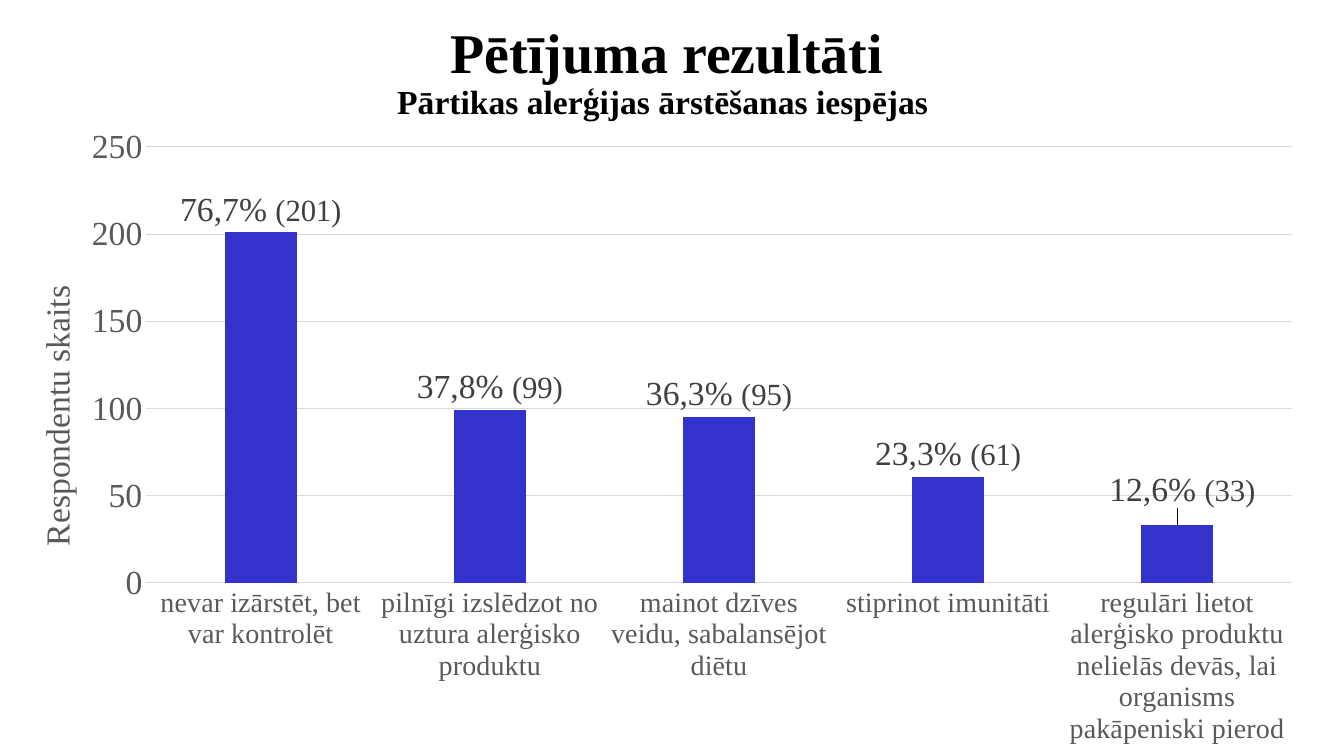
"""Builds the slide on treatment options for food allergy."""
import pptx
import pptx.chart.data
import pptx.dml.color
import pptx.enum.chart
import pptx.enum.text
import pptx.oxml
import pptx.oxml.ns
import pptx.util
from pptx.util import Inches

FONT = "Times New Roman"
BLACK = pptx.dml.color.RGBColor(0x00, 0x00, 0x00)
BAR_BLUE = pptx.dml.color.RGBColor(0x33, 0x33, 0xCC)
AXIS_GREY = pptx.dml.color.RGBColor(0x59, 0x59, 0x59)
LABEL_GREY = pptx.dml.color.RGBColor(0x40, 0x40, 0x40)
GRID_GREY = pptx.dml.color.RGBColor(0xD9, 0xD9, 0xD9)

ANSWERS = [
    ("nevar izārstēt, bet var kontrolēt", 201, "76,7%"),
    ("pilnīgi izslēdzot no uztura alerģisko produktu", 99, "37,8%"),
    ("mainot dzīves veidu, sabalansējot diētu", 95, "36,3%"),
    ("stiprinot imunitāti", 61, "23,3%"),
    ("regulāri lietot alerģisko produktu nelielās devās, "
     "lai organisms pakāpeniski pierod", 33, "12,6%"),
]


def set_font(font, size, color, bold=False):
    """Apply the slide's typeface with a size, colour and weight."""
    font.name = FONT
    font.size = pptx.util.Pt(size)
    font.color.rgb = color
    font.bold = bold


def add_run(paragraph, text, size, color, bold=False):
    """Append formatted text to a paragraph."""
    run = paragraph.add_run()
    run.text = text
    set_font(run.font, size, color, bold)


def set_line(line, color):
    """Draw a thin line in the given colour."""
    line.color.rgb = color
    line.width = pptx.util.Pt(0.75)


def make_layout(**settings):
    """Return a manual chart layout with the given settings."""
    items = "".join(f'<c:{key} val="{value}"/>' for key, value in settings.items())
    return pptx.oxml.parse_xml(
        f'<c:layout {pptx.oxml.ns.nsdecls("c")}>'
        f'<c:manualLayout>{items}</c:manualLayout></c:layout>')


def place_after(chart, anchor_path, layout):
    """Put a layout after the chart element found, replacing any there."""
    anchor = chart.element.xpath(anchor_path)[0]
    for old_layout in anchor.getparent().findall(pptx.oxml.ns.qn("c:layout")):
        anchor.getparent().remove(old_layout)
    anchor.addnext(layout)


def fill_title(title):
    """Write the heading and its subheading in the title placeholder."""
    title.left, title.top = Inches(0.68), Inches(0.15)
    title.width, title.height = Inches(11.87), Inches(1.4)
    frame = title.text_frame
    frame.auto_size = pptx.enum.text.MSO_AUTO_SIZE.NONE
    frame.vertical_anchor = pptx.enum.text.MSO_ANCHOR.TOP
    frame.margin_top = Inches(0.1)
    heading = frame.paragraphs[0]
    heading.alignment = pptx.enum.text.PP_ALIGN.CENTER
    heading.line_spacing = 0.9
    add_run(heading, "Pētījuma rezultāti", 40, BLACK, True)
    heading.add_line_break()
    add_run(heading, "Pārtikas alerģijas ārstēšanas iespējas ", 24, BLACK, True)


def add_answer_chart(slide):
    """Add the column chart of answers and return it."""
    data = pptx.chart.data.CategoryChartData()
    data.categories = [answer for answer, count, share in ANSWERS]
    data.add_series("Series 1", [count for answer, count, share in ANSWERS])
    chart = slide.shapes.add_chart(
        pptx.enum.chart.XL_CHART_TYPE.COLUMN_CLUSTERED,
        Inches(0.16), Inches(1.27), Inches(12.91), Inches(6.27), data).chart
    chart.has_legend = False
    chart.has_title = False
    set_font(chart.font, 24, BLACK)
    plot = chart.plots[0]
    plot.gap_width, plot.overlap = 219, -27
    plot.vary_by_categories = False
    bars = plot.series[0].format
    bars.fill.solid()
    bars.fill.fore_color.rgb = BAR_BLUE
    bars.line.fill.background()
    place_after(chart, "c:chart/c:plotArea/*[1]/self::c:layout | "
                "c:chart/c:autoTitleDeleted", make_plot_anchor(chart))
    return chart


def make_plot_anchor(chart):
    """Set the inner plot area and return its element for placement."""
    area = chart.element.xpath("c:chart/c:plotArea")[0]
    for old_layout in area.findall(pptx.oxml.ns.qn("c:layout")):
        area.remove(old_layout)
    area.insert(0, make_layout(layoutTarget="inner", xMode="edge", yMode="edge",
                               x=0.1, y=0.03, w=0.88, h=0.69))
    return area


def format_axes(chart):
    """Style both axes, the gridlines and the value axis title."""
    answers, counts = chart.category_axis, chart.value_axis
    for axis, size in ((answers, 20), (counts, 24)):
        axis.major_tick_mark = pptx.enum.chart.XL_TICK_MARK.NONE
        axis.minor_tick_mark = pptx.enum.chart.XL_TICK_MARK.NONE
        set_font(axis.tick_labels.font, size, AXIS_GREY)
    set_line(answers.format.line, GRID_GREY)
    counts.format.line.fill.background()
    counts.minimum_scale, counts.maximum_scale = 0, 250
    counts.major_unit = 50
    set_line(counts.major_gridlines.format.line, GRID_GREY)
    frame = counts.axis_title.text_frame
    add_run(frame.paragraphs[0], "Respondentu skaits", 24, AXIS_GREY)
    body = chart.element.xpath(".//c:valAx/c:title//a:bodyPr")[0]
    body.set("rot", "-5400000")
    body.set("vert", "horz")
    place_after(chart, ".//c:valAx/c:title/c:tx",
                make_layout(xMode="edge", yMode="edge", x=0.01, y=0.24))


def label_bars(chart):
    """Write the share and count above every bar."""
    series = chart.plots[0].series[0]
    outside = pptx.enum.chart.XL_LABEL_POSITION.OUTSIDE_END
    labels = series.data_labels
    labels.show_value = True
    labels.position = outside
    set_font(labels.font, 24, LABEL_GREY)
    for index, (answer, count, share) in enumerate(ANSWERS):
        label = series.points[index].data_label
        paragraph = label.text_frame.paragraphs[0]
        add_run(paragraph, f"{share} ", 24, LABEL_GREY)
        add_run(paragraph, f"({count})", 22, LABEL_GREY)
        label.position = outside
    place_after(chart, f".//c:dLbl/c:idx[@val='{len(ANSWERS) - 1}']",
                make_layout(x=0.004, y=-0.02))


def main():
    """Build and save the slide."""
    deck = pptx.Presentation()
    deck.slide_width, deck.slide_height = Inches(13.33), Inches(7.5)
    slide = deck.slides.add_slide(deck.slide_layouts[5])
    fill_title(slide.shapes.title)
    chart = add_answer_chart(slide)
    format_axes(chart)
    label_bars(chart)
    deck.save("out.pptx")


if __name__ == "__main__":
    main()
